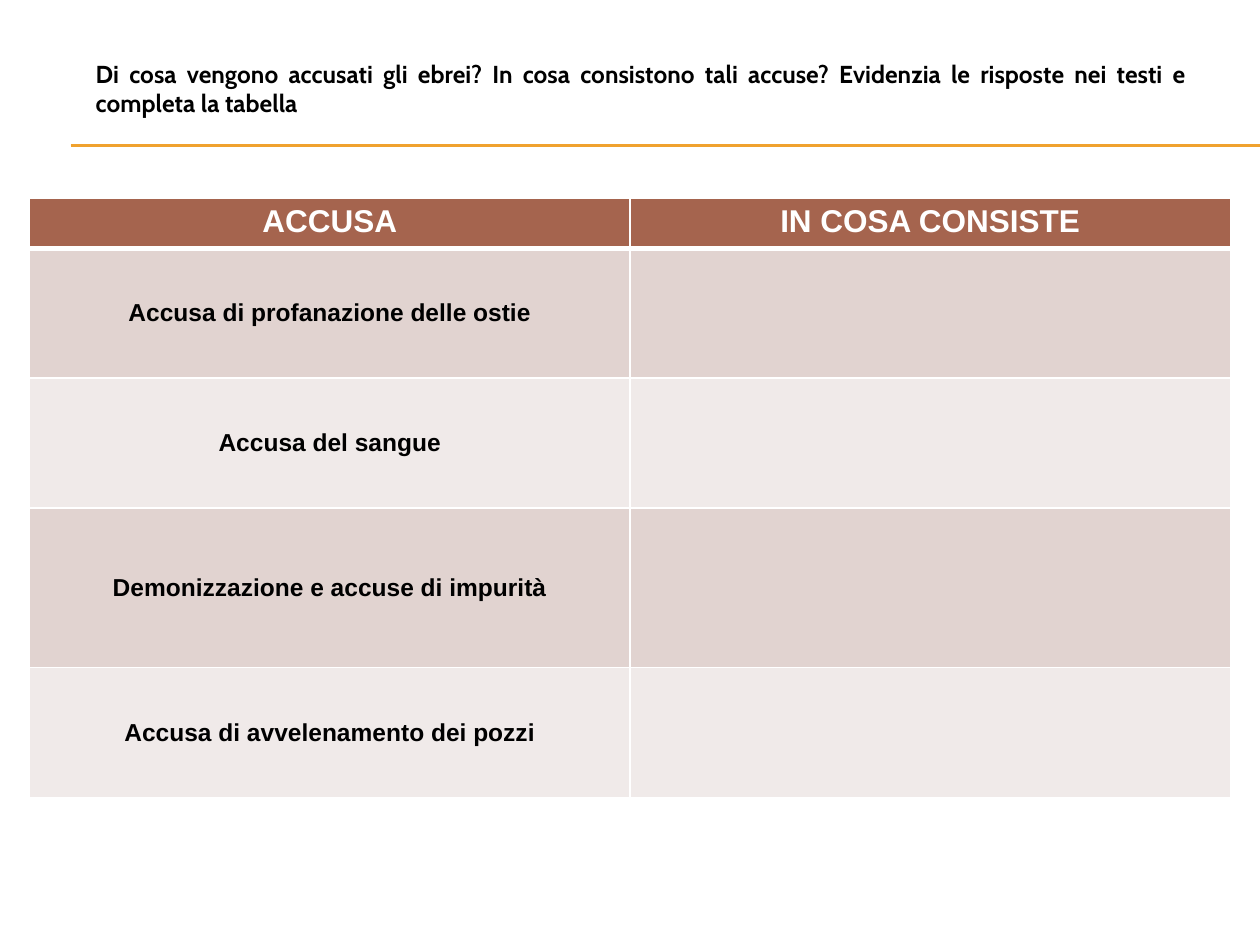
from lxml import etree
from pptx import Presentation
from pptx.dml.color import RGBColor
from pptx.enum.shapes import MSO_CONNECTOR
from pptx.enum.text import MSO_ANCHOR, MSO_AUTO_SIZE, PP_ALIGN
from pptx.oxml.ns import qn
from pptx.util import Inches, Pt

STRAIGHT = MSO_CONNECTOR.STRAIGHT
TOP, MIDDLE = MSO_ANCHOR.TOP, MSO_ANCHOR.MIDDLE
CENTER, JUSTIFY = PP_ALIGN.CENTER, PP_ALIGN.JUSTIFY
COLORS = {
    "rule": "F0A22E", "header": "A5644E", "odd": "E1D3D0",
    "even": "F0EAE9", "white": "FFFFFF", "black": "000000",
}
ROWS = [
    ("ACCUSA", "IN COSA CONSISTE"),
    ("Accusa di profanazione delle ostie", ""),
    ("Accusa del sangue", ""),
    ("Demonizzazione e accuse di impurità", ""),
    ("Accusa di avvelenamento dei pozzi", ""),
]
ROW_HEIGHTS = [0.4, 1.03, 1.03, 1.27, 1.03]


def set_font(para, name, size, color):
    para.font.name = name
    para.font.size = Pt(size)
    para.font.bold = True
    para.font.color.rgb = RGBColor.from_string(COLORS[color])


def add_border(cell, side, points):
    border = etree.SubElement(cell._tc.get_or_add_tcPr(), qn(f"a:{side}"), w=str(Pt(points)))
    fill = etree.SubElement(border, qn("a:solidFill"))
    etree.SubElement(fill, qn("a:srgbClr"), val=COLORS["white"])


deck = Presentation()
deck.slide_width, deck.slide_height = Inches(10), Inches(7.5)
page = deck.slides.add_slide(deck.slide_layouts[5])

# Double rule under the title
for y in (1.15, 1.16):
    rule = page.shapes.add_connector(STRAIGHT, Inches(0.56), Inches(y), deck.slide_width, Inches(y))
    rule.line.color.rgb = RGBColor.from_string(COLORS["rule"])
    rule.line.width = Pt(0.75)
    etree.SubElement(rule._element.spPr, qn("a:effectLst"))

# Title
title = page.shapes.title
title.left, title.top = Inches(0.66), Inches(0.35)
title.width, title.height = Inches(8.86), Inches(0.7)
frame = title.text_frame
frame.text = ("Di cosa vengono accusati gli ebrei? In cosa consistono tali accuse? "
              "Evidenzia le risposte nei testi e completa la tabella")
frame.word_wrap = True
frame.auto_size = MSO_AUTO_SIZE.NONE
frame.vertical_anchor = MIDDLE
frame.paragraphs[0].alignment = JUSTIFY
set_font(frame.paragraphs[0], "Cabin", 14, "black")

# Table of accusations
table = page.shapes.add_table(
    len(ROWS), 2, Inches(0.235), Inches(1.57), Inches(9.53), Inches(sum(ROW_HEIGHTS))
).table
for r, (texts, height) in enumerate(zip(ROWS, ROW_HEIGHTS)):
    table.rows[r].height = Inches(height)
    is_header = r == 0
    band = "header" if is_header else "odd" if r % 2 else "even"
    for c, text in enumerate(texts):
        cell = table.cell(r, c)
        cell.vertical_anchor = TOP if is_header else MIDDLE
        for side in ("lnL", "lnR", "lnT", "lnB"):
            thick = (is_header and side == "lnB") or (r == 1 and side == "lnT")
            add_border(cell, side, 3 if thick else 1)
        cell.fill.solid()
        cell.fill.fore_color.rgb = RGBColor.from_string(COLORS[band])
        cell.text = text
        para = cell.text_frame.paragraphs[0]
        para.alignment = CENTER
        set_font(para, "Arial", 18 if is_header else 14, "white" if is_header else "black")

deck.save("out.pptx")
